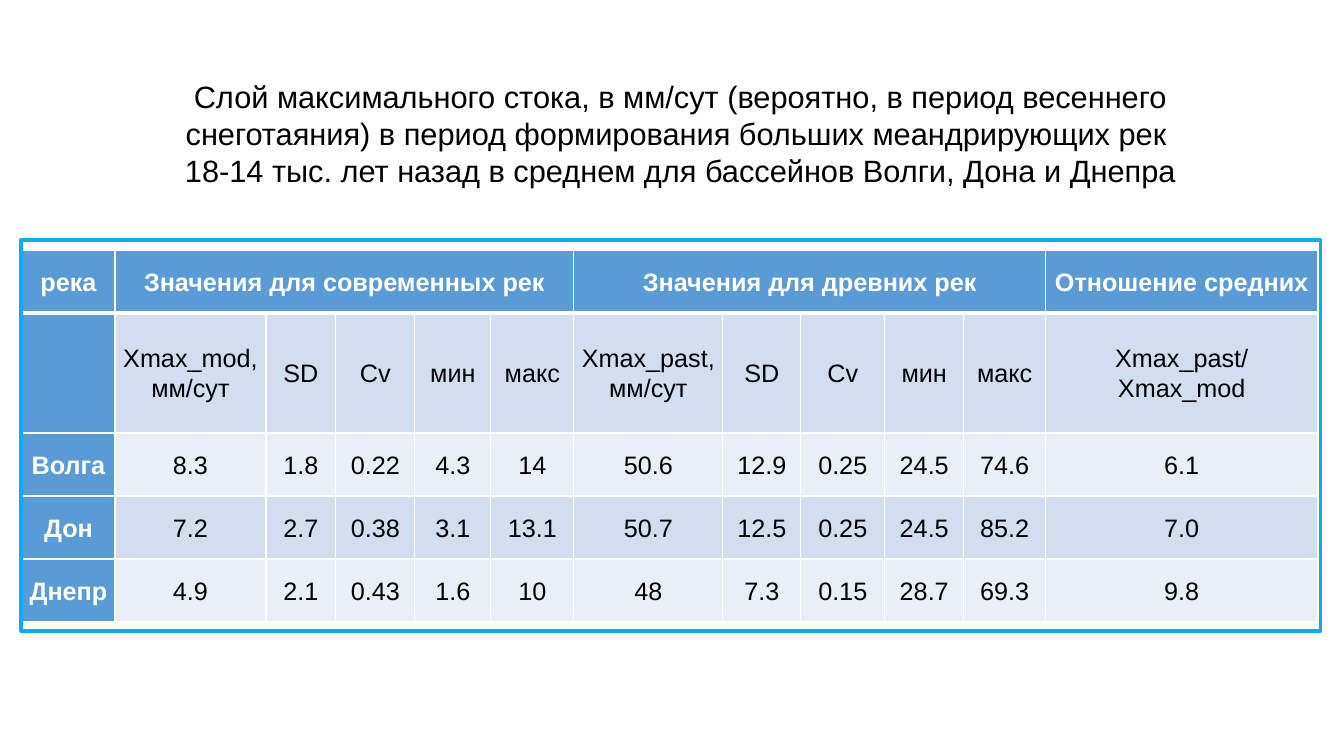
from lxml.etree import SubElement
from pptx import Presentation
from pptx.dml.color import RGBColor
from pptx.enum.shapes import MSO_SHAPE
from pptx.enum.text import MSO_ANCHOR, PP_ALIGN
from pptx.oxml.ns import qn
from pptx.util import Emu, Pt

# Content
TITLE = [
    "Слой максимального стока, в мм/сут (вероятно, в период весеннего "
    "снеготаяния) в период формирования больших меандрирующих рек ",
    "18-14 тыс. лет назад в среднем для бассейнов Волги, Дона и Днепра",
]
# Header groups: text and number of columns
GROUPS = [
    ("река", 1),
    ("Значения для современных рек", 5),
    ("Значения для древних рек", 5),
    ("Отношение средних", 1),
]
STATISTICS = ["SD", "Cv", "мин", "макс"]
ROWS = [
    ["", "Xmax_mod, мм/сут", *STATISTICS, "Xmax_past, мм/сут", *STATISTICS,
     "Xmax_past/\nXmax_mod"],
    ["Волга", "8.3", "1.8", "0.22", "4.3", "14",
     "50.6", "12.9", "0.25", "24.5", "74.6", "6.1"],
    ["Дон", "7.2", "2.7", "0.38", "3.1", "13.1",
     "50.7", "12.5", "0.25", "24.5", "85.2", "7.0"],
    ["Днепр", "4.9", "2.1", "0.43", "1.6", "10",
     "48", "7.3", "0.15", "28.7", "69.3", "9.8"],
]

# Layout in px
SLIDE_SIZE = (1344, 756)
TITLE_BOX = (102, 72, 1157, 122)
FRAME_BOX = (21, 240, 1300, 391)
TABLE_LEFT, TABLE_TOP = 22, 250
COLUMN_WIDTHS = [93, 151, 70, 79, 76, 83, 149, 78, 84, 79, 82, 272]
ROW_HEIGHTS = [63, 120, 63, 63, 63]
CELL_INSET = 7

FONT = "Arial"
BLUE, BANDS = "5B9BD5", ("EAEFF7", "D2DEEF")
WHITE, BLACK, FRAME_COLOR = "FFFFFF", "000000", "00B0F0"


def px(length):
    return Emu(round(length * 914400 / 100.8))


def color(value):
    return RGBColor.from_string(value)


def write(text_frame, lines, size, text_color, bold=False, spacing=1.0):
    for index, line in enumerate(lines):
        paragraph = text_frame.add_paragraph() if index else text_frame.paragraphs[0]
        paragraph.alignment = PP_ALIGN.CENTER
        paragraph.line_spacing = spacing
        run = paragraph.add_run()
        run.text = line
        run.font.name, run.font.size, run.font.bold = FONT, Pt(size), bold
        run.font.color.rgb = color(text_color)


def set_borders(cell, widths):
    properties = cell._tc.get_or_add_tcPr()
    for side, width in widths.items():
        line = SubElement(properties, qn(f"a:ln{side}"), w=str(Pt(width)))
        fill = SubElement(line, qn("a:solidFill"))
        SubElement(fill, qn("a:srgbClr"), val=WHITE)


presentation = Presentation()
presentation.slide_width, presentation.slide_height = map(px, SLIDE_SIZE)
slide = presentation.slides.add_slide(presentation.slide_layouts[5])

# Title
title = slide.shapes.title
title.left, title.top, title.width, title.height = map(px, TITLE_BOX)
title.text_frame.word_wrap = True
title.text_frame.vertical_anchor = MSO_ANCHOR.MIDDLE
write(title.text_frame, TITLE, 22, BLACK)

# Table grid
header = [text for name, span in GROUPS for text in [name] + [""] * (span - 1)]
cells = [header, *ROWS]
table = slide.shapes.add_table(
    len(cells), len(header), px(TABLE_LEFT), px(TABLE_TOP),
    px(sum(COLUMN_WIDTHS)), px(sum(ROW_HEIGHTS))).table
table.first_col = True
for column, width in zip(table.columns, COLUMN_WIDTHS):
    column.width = px(width)
for row, height in zip(table.rows, ROW_HEIGHTS):
    row.height = px(height)

# Merged header groups
start = 0
for name, span in GROUPS:
    if span > 1:
        table.cell(0, start).merge(table.cell(0, start + span - 1))
    start += span

# Table cells
for row_index, texts in enumerate(cells):
    for column_index, text in enumerate(texts):
        cell = table.cell(row_index, column_index)
        heading = row_index == 0 or column_index == 0
        set_borders(cell, {"L": 1, "R": 1,
                           "T": 3 if row_index == 1 else 1,
                           "B": 3 if row_index == 0 else 1})
        cell.fill.solid()
        cell.fill.fore_color.rgb = color(BLUE if heading else BANDS[row_index % 2])
        cell.vertical_anchor = MSO_ANCHOR.MIDDLE
        cell.margin_left = cell.margin_right = px(CELL_INSET)
        cell.margin_top = cell.margin_bottom = 0
        if text:
            write(cell.text_frame, text.split("\n"), 18,
                  WHITE if heading else BLACK, heading, 1.07)

# Frame around the table
frame = slide.shapes.add_shape(MSO_SHAPE.RECTANGLE, *map(px, FRAME_BOX))
frame.shadow.inherit = False
frame.fill.background()
frame.line.color.rgb = color(FRAME_COLOR)
frame.line.width = Pt(2.25)

presentation.save("out.pptx")
